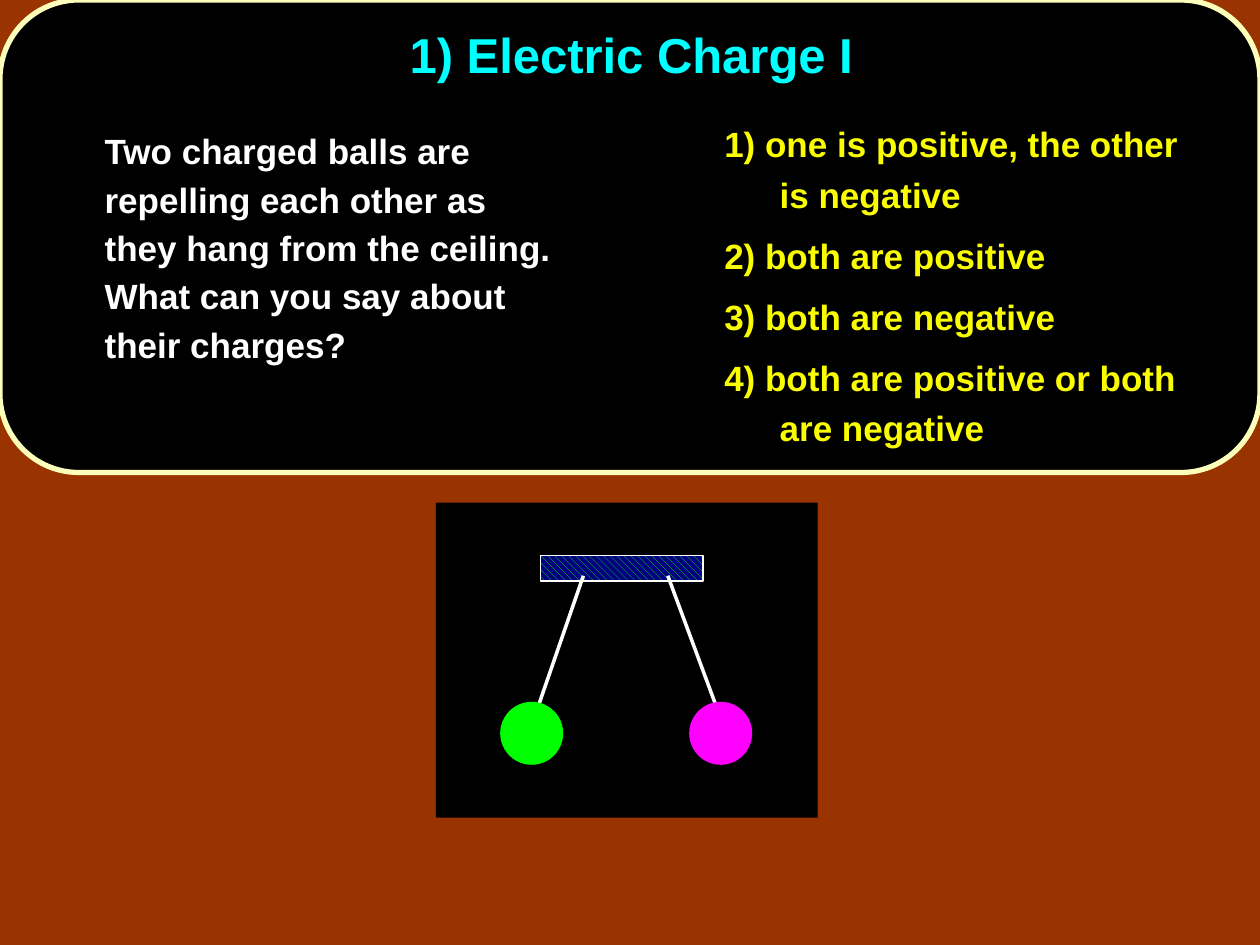
from lxml import etree
from pptx import Presentation
from pptx.dml.color import RGBColor
from pptx.enum.dml import MSO_PATTERN
from pptx.enum.shapes import MSO_CONNECTOR, MSO_SHAPE
from pptx.enum.text import MSO_ANCHOR, MSO_AUTO_SIZE, PP_ALIGN
from pptx.oxml.ns import qn
from pptx.util import Inches, Pt

RECT, ROUND, OVAL = MSO_SHAPE.RECTANGLE, MSO_SHAPE.ROUNDED_RECTANGLE, MSO_SHAPE.OVAL
STRAIGHT = MSO_CONNECTOR.STRAIGHT
HATCH = MSO_PATTERN.WIDE_DOWNWARD_DIAGONAL
TOP, MIDDLE = MSO_ANCHOR.TOP, MSO_ANCHOR.MIDDLE
LEFT, CENTER = PP_ALIGN.LEFT, PP_ALIGN.CENTER
NO_FIT = MSO_AUTO_SIZE.NONE

RUST = RGBColor(0x99, 0x33, 0x00)
BLACK = RGBColor(0x00, 0x00, 0x00)
WHITE = RGBColor(0xFF, 0xFF, 0xFF)
CREAM = RGBColor(0xFC, 0xFE, 0xB9)
CYAN = RGBColor(0x00, 0xFF, 0xFF)
YELLOW = RGBColor(0xFA, 0xFD, 0x00)
GREEN = RGBColor(0x00, 0xFF, 0x00)
NAVY = RGBColor(0x00, 0x00, 0x80)
PINK = RGBColor(0xFF, 0x00, 0xFF)

QUESTION = ("Two charged balls are repelling each other as they hang from "
            "the ceiling.  What can you say about their charges?")
ANSWERS = [
    "1) one is positive, the other is negative",
    "2) both are positive",
    "3) both are negative",
    "4) both are positive or both are negative",
]


class Board:
    """Holds the font and the slide, and draws each kind of element."""

    def __init__(self, slide, font):
        self.slide = slide
        self.font = font
        self.home = slide.shapes

    def paint(self, color):
        fill = self.slide.background.fill
        fill.solid()
        fill.fore_color.rgb = color

    def group(self):
        self.home = self.slide.shapes.add_group_shape().shapes

    def shape(self, kind, box, color, edge=None, width=1):
        item = self.home.add_shape(kind, *map(Inches, box))
        item.shadow.inherit = False
        item.fill.solid()
        item.fill.fore_color.rgb = color
        if edge is None:
            item.line.fill.background()
        else:
            item.line.color.rgb = edge
            item.line.width = Pt(width)
        return item

    def panel(self, box, color, edge):
        item = self.shape(ROUND, box, color, edge, 3)
        item.adjustments[0] = 0.167
        self.slide.shapes._spTree.insert(2, item._element)

    def beam(self, box, front, back, edge):
        fill = self.shape(RECT, box, back, edge).fill
        fill.patterned()
        fill.pattern = HATCH
        fill.fore_color.rgb = front
        fill.back_color.rgb = back

    def string(self, start, end, color):
        line = self.home.add_connector(STRAIGHT, *map(Inches, start + end))
        line.line.color.rgb = color
        line.line.width = Pt(2)
        etree.SubElement(line._element.spPr, qn("a:effectLst"))

    def text(self, item, box, words, size, color, space, before=0,
             align=LEFT, anchor=TOP, margin=0, indent=0):
        item.left, item.top, item.width, item.height = map(Inches, box)
        frame = item.text_frame
        frame.text = words
        frame.word_wrap = True
        frame.auto_size = NO_FIT
        frame.vertical_anchor = anchor
        for para in frame.paragraphs:
            para.alignment = align
            para.line_spacing = space
            para.space_before = Pt(before)
            props = para._p.get_or_add_pPr()
            props.set("marL", str(Inches(margin)))
            props.set("indent", str(Inches(indent)))
            etree.SubElement(props, qn("a:buNone"))
            for run in para.runs:
                run.font.name = self.font
                run.font.size = Pt(size)
                run.font.bold = True
                run.font.color.rgb = color

    def box(self, box, *args, **opts):
        item = self.slide.shapes.add_textbox(*map(Inches, box))
        self.text(item, box, *args, **opts)


def main():
    deck = Presentation()
    deck.slide_width, deck.slide_height = Inches(10), Inches(7.5)
    slide = deck.slides.add_slide(deck.slide_layouts[1])
    board = Board(slide, "Arial")
    board.paint(RUST)
    board.panel((0, 0, 10, 3.75), BLACK, CREAM)
    board.text(slide.shapes.title, (1.02, 0, 7.98, 0.92), "1) Electric Charge I",
               28, CYAN, 0.9, align=CENTER, anchor=MIDDLE)
    board.text(slide.placeholders[1], (0.29, 0.93, 4.28, 2.44), QUESTION,
               20, WHITE, 1.15, before=10, margin=0.44)
    board.box((5.65, 0.86, 3.84, 2.92), "\n".join(ANSWERS),
              20, YELLOW, 1.2, before=6, margin=0.44, indent=-0.44)

    board.group()
    board.shape(RECT, (3.46, 3.99, 3.03, 2.5), BLACK)
    board.beam((4.29, 4.41, 1.29, 0.2), GREEN, NAVY, WHITE)
    board.string((5.3, 4.57), (5.69, 5.62), WHITE)
    board.string((4.63, 4.57), (4.26, 5.64), WHITE)
    for left, color in ((3.97, GREEN), (5.47, PINK)):
        board.shape(OVAL, (left, 5.57, 0.5, 0.5), color)
    deck.save("out.pptx")


if __name__ == "__main__":
    main()
